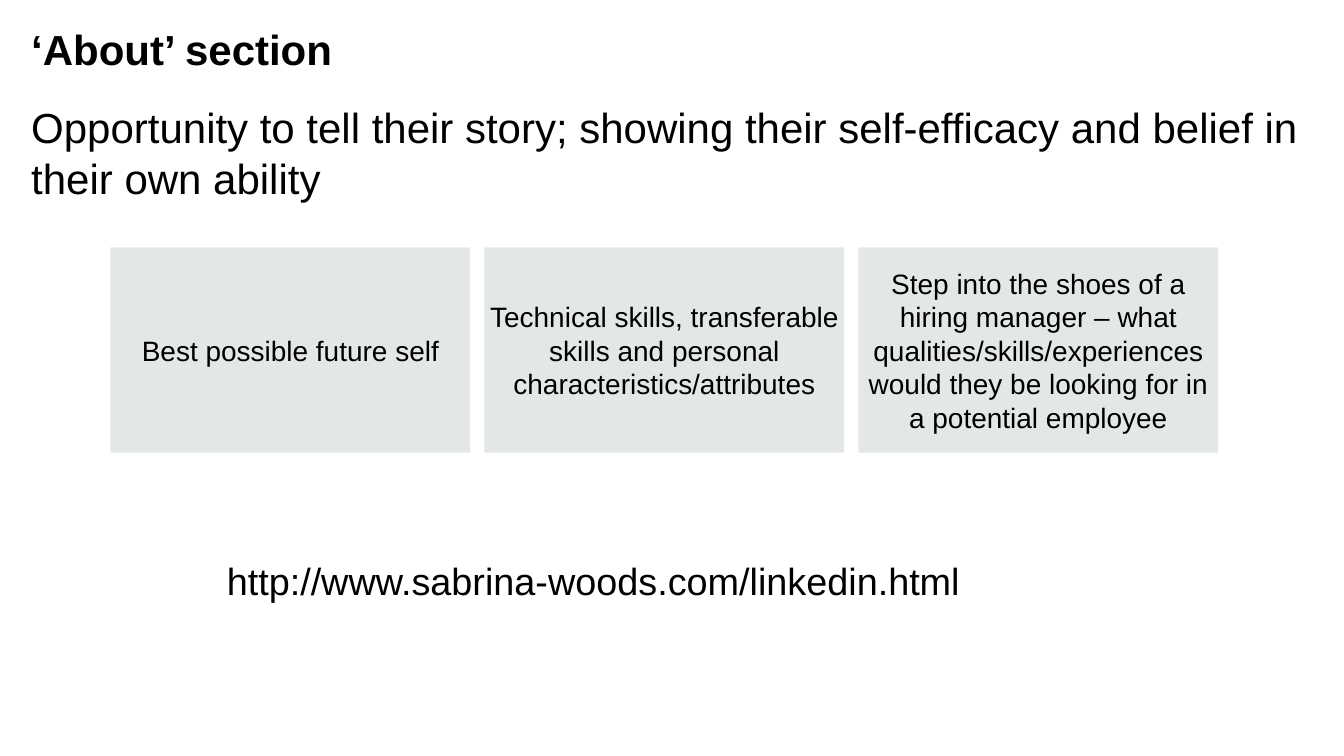
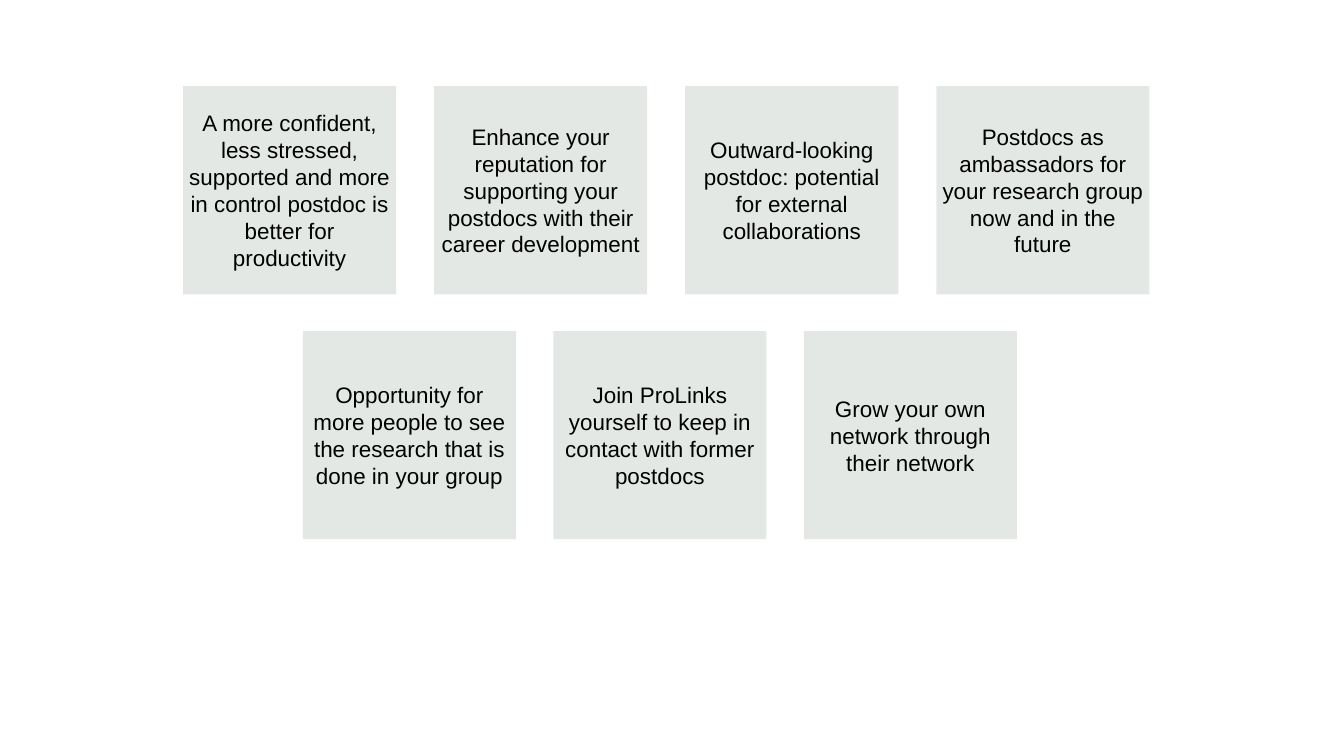
from pptx import Presentation
from pptx.dml.color import RGBColor
from pptx.enum.shapes import MSO_SHAPE
from pptx.enum.text import MSO_ANCHOR, MSO_AUTO_SIZE, PP_ALIGN
from pptx.oxml.ns import qn
from pptx.util import Pt

COLORS = {"text": "000000", "card": "E4E8E5", "background": "FFFFFF"}
FONT = "Arial"
TITLE_BOX = (44.6, 33.1, 1768.3, 113)
LEAD_BOX = (44.6, 145.6, 1831, 113)
LINK_BOX = (310.3, 793.4, 1075, 72.7)

ABOUT_CARDS = [
    "Best possible future self",
    "Technical skills, transferable skills and personal characteristics/attributes",
    "Step into the shoes of a hiring manager – what qualities/skills/experiences "
    "would they be looking for in a potential employee",
]
BENEFITS_TOP = [
    "A more confident, less stressed, supported and more in control postdoc "
    "is better for productivity",
    "Enhance your reputation for supporting your postdocs with their career development",
    "Outward-looking postdoc: potential for external collaborations",
    "Postdocs as ambassadors for your research group now and in the future",
]
BENEFITS_BOTTOM = [
    "Opportunity for more people to see the research that is done in your group",
    "Join ProLinks yourself to keep in contact with former postdocs",
    "Grow your own network through their network",
]


def rgb(name):
    return RGBColor.from_string(COLORS[name])


def write(tf, text, size, align=PP_ALIGN.LEFT, bold=False):
    p = tf.paragraphs[0]
    p.alignment = align
    p.space_before = Pt(0)
    r = p.add_run()
    r.text = text
    r.font.name = FONT
    r.font.size = Pt(size)
    r.font.bold = bold
    r.font.color.rgb = rgb("text")
    return p


def fill_placeholder(sp, box, text, bold=False):
    sp.left, sp.top, sp.width, sp.height = map(Pt, box)
    tf = sp.text_frame
    tf.margin_left = tf.margin_right = tf.margin_top = tf.margin_bottom = 0
    tf.vertical_anchor = MSO_ANCHOR.TOP
    tf.auto_size = MSO_AUTO_SIZE.NONE
    tf.word_wrap = True
    return write(tf, text, 60, bold=bold)


def add_lead(sp, text):
    pPr = fill_placeholder(sp, LEAD_BOX, text)._p.get_or_add_pPr()
    pPr.set("marL", "0")
    pPr.set("indent", "0")
    pPr.append(pPr.makeelement(qn("a:buNone"), {}))


def add_link(s, text):
    tf = s.shapes.add_textbox(*map(Pt, LINK_BOX)).text_frame
    tf.word_wrap = False
    tf.auto_size = MSO_AUTO_SIZE.SHAPE_TO_FIT_TEXT
    write(tf, text, 54, PP_ALIGN.CENTER)


def add_card_row(s, texts, left, top, pitch, card_size, font_size):
    width, height = card_size
    for i, text in enumerate(texts):
        sp = s.shapes.add_shape(MSO_SHAPE.RECTANGLE, Pt(left + i * pitch), Pt(top),
                                Pt(width), Pt(height))
        sp.shadow.inherit = False
        sp.fill.solid()
        sp.fill.fore_color.rgb = rgb("card")
        sp.line.fill.background()
        tf = sp.text_frame
        tf.word_wrap = True
        tf.vertical_anchor = MSO_ANCHOR.MIDDLE
        write(tf, text, font_size, PP_ALIGN.CENTER)


def add_slide(prs, layout):
    s = prs.slides.add_slide(prs.slide_layouts[layout])
    s.background.fill.solid()
    s.background.fill.fore_color.rgb = rgb("background")
    return s


def main():
    """Build the two slides and save the deck."""
    prs = Presentation()
    prs.slide_width, prs.slide_height = Pt(1920), Pt(1080)

    s = add_slide(prs, 1)
    fill_placeholder(s.shapes.title, TITLE_BOX, "‘About’ section", bold=True)
    add_lead(s.placeholders[1], "Opportunity to tell their story; showing their "
             "self-efficacy and belief in their own ability")
    add_link(s, "http://www.sabrina-woods.com/linkedin.html")
    add_card_row(s, ABOUT_CARDS, 157.7, 353.5, 534.2, (514, 293), 40)

    s = add_slide(prs, 6)
    benefit_size = (304.5, 297.4)
    add_card_row(s, BENEFITS_TOP, 261.5, 123.1, 358.7, benefit_size, 32)
    add_card_row(s, BENEFITS_BOTTOM, 432.7, 473, 357.8, benefit_size, 32)

    prs.save("out.pptx")


if __name__ == "__main__":
    main()
